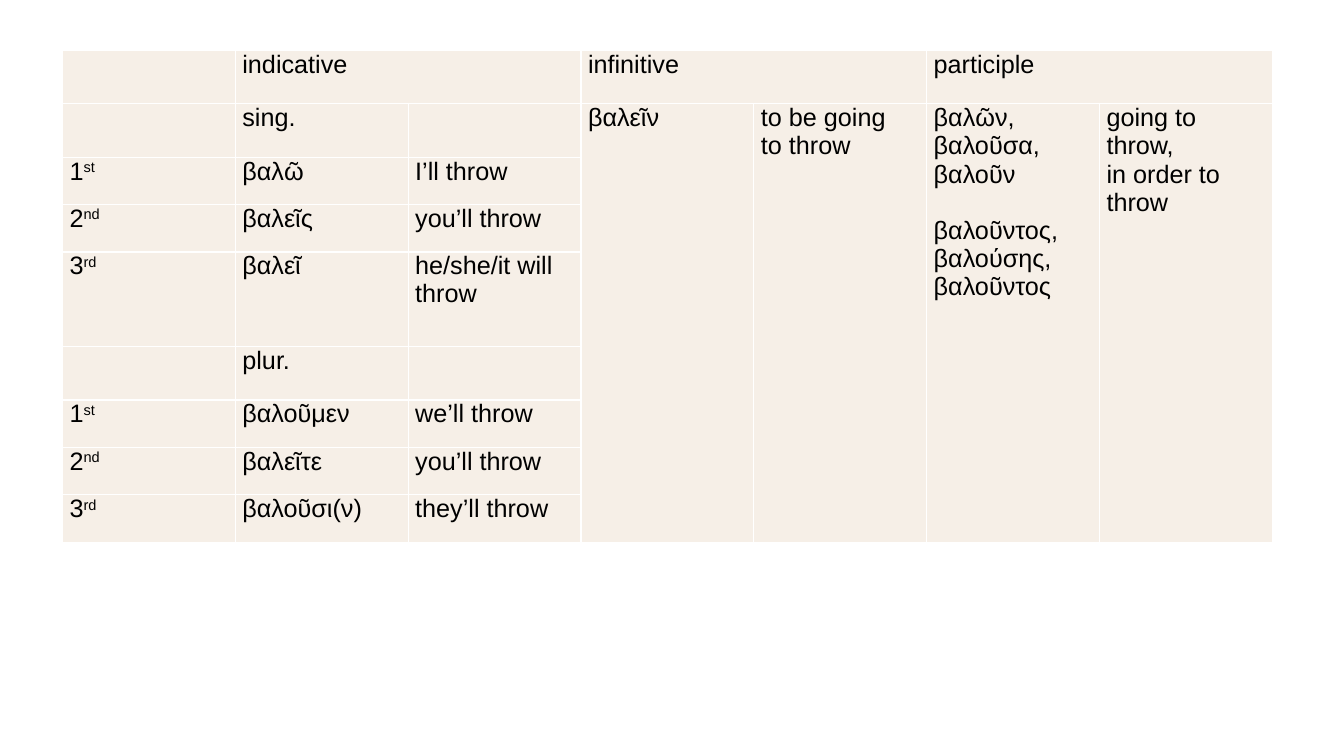
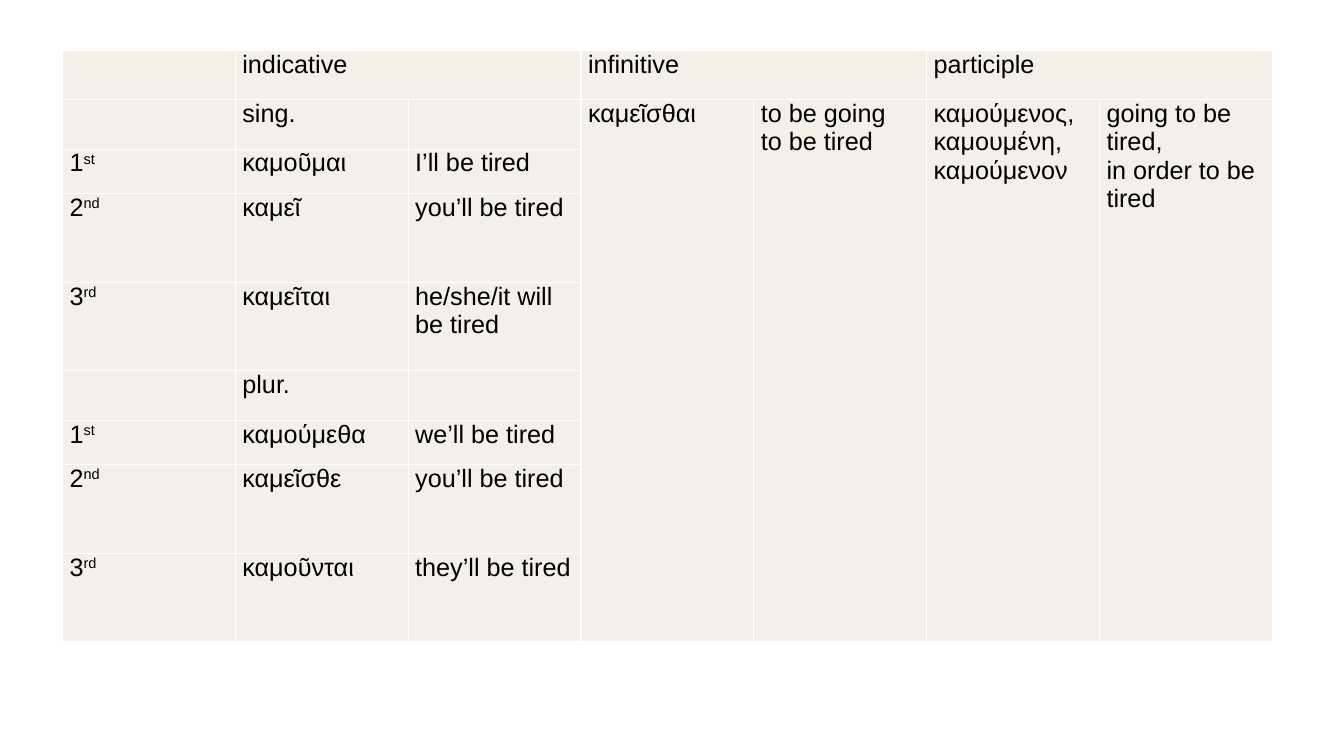
import dataclasses

import pptx
import pptx.dml.color
import pptx.oxml
import pptx.oxml.ns
import pptx.util

SAND = pptx.dml.color.RGBColor(0xF6, 0xEF, 0xE7)
WHITE = pptx.dml.color.RGBColor(0xFF, 0xFF, 0xFF)
BLACK = pptx.dml.color.RGBColor(0x00, 0x00, 0x00)
SCALE = 9144  # EMU in one px, at 100 px to the inch
LEFT, TOP, WIDE, COLS = 62, 50, 1200, 7
FONT = {"name": "Arial", "size": pptx.util.Pt(18), "bold": False}
EDGES = ("lnL", "lnR", "lnT", "lnB")
HEADS = ("indicative", "infinitive", "participle")
GROUPS = {1: "sing.", 5: "plur."}
RANKS = (("1", "st"), ("2", "nd"), ("3", "rd"))
WHO = ("I’ll", "you’ll", "he/she/it will", "we’ll", "you’ll", "they’ll")


@dataclasses.dataclass(frozen=True)
class Verb:
    act: str
    forms: tuple[str, ...]
    inf: str
    genders: tuple[str, ...]
    rows: tuple[int, ...]


VERBS = (
    Verb(
        "throw",
        ("βαλῶ", "βαλεῖς", "βαλεῖ", "βαλοῦμεν", "βαλεῖτε", "βαλοῦσι(ν)"),
        "βαλεῖν",
        ("βαλῶν, βαλοῦσα, βαλοῦν", "βαλοῦντος, βαλούσης, βαλοῦντος"),
        (53, 53, 47, 47, 94, 53, 47, 47, 47),
    ),
    Verb(
        "be tired",
        ("καμοῦμαι", "καμεῖ", "καμεῖται", "καμούμεθα", "καμεῖσθε", "καμοῦνται"),
        "καμεῖσθαι",
        ("καμούμενος, καμουμένη,\vκαμούμενον",),
        (49, 49, 44, 88, 88, 49, 44, 88, 88),
    ),
)


def px(size: int) -> pptx.util.Emu:
    return pptx.util.Emu(size * SCALE)


def style(run) -> None:
    for key, value in FONT.items():
        setattr(run.font, key, value)
    run.font.color.rgb = BLACK


def put(cell, *paras: str, sup: str = "") -> None:
    """Write paragraphs into a cell, with an optional raised ending."""
    frame = cell.text_frame
    for index, text in enumerate(paras):
        para = frame.add_paragraph() if index else frame.paragraphs[0]
        para.text = text
        if index:
            para.space_before = pptx.util.Pt(20)
        if sup:
            run = para.add_run()
            run.text = sup
            run._r.get_or_add_rPr().set("baseline", "30000")
        for run in para.runs:
            style(run)


def paint(cell) -> None:
    """Give a cell its margins, fill and thin white borders."""
    margins = {"margin_left": 7, "margin_right": 7, "margin_top": 0, "margin_bottom": 0}
    for key, value in margins.items():
        setattr(cell, key, px(value))
    cell.fill.solid()
    cell.fill.fore_color.rgb = SAND
    props = cell._tc.get_or_add_tcPr()
    for index, edge in enumerate(EDGES):
        props.insert(index, pptx.oxml.parse_xml(
            f'<a:{edge} {pptx.oxml.ns.nsdecls("a")} w="12700"><a:solidFill>'
            f'<a:srgbClr val="{WHITE}"/></a:solidFill></a:{edge}>'))


def draw(slide, verb: Verb) -> None:
    last = len(verb.rows) - 1
    frame = slide.shapes.add_table(
        len(verb.rows), COLS, px(LEFT), px(TOP), px(WIDE), px(sum(verb.rows)))
    table = frame.table
    table.first_row = table.horz_banding = False
    for row, high in zip(table.rows, verb.rows):
        row.height = px(high)
    for cell in table.iter_cells():
        paint(cell)

    for index, head in enumerate(HEADS):
        col = 1 + 2 * index
        table.cell(0, col).merge(table.cell(0, col + 1))
        put(table.cell(0, col), head)

    for start, (top, label) in enumerate(GROUPS.items()):
        put(table.cell(top, 1), label)
        for step, (rank, sup) in enumerate(RANKS):
            row, item = top + 1 + step, start * len(RANKS) + step
            put(table.cell(row, 0), rank, sup=sup)
            put(table.cell(row, 1), verb.forms[item])
            put(table.cell(row, 2), f"{WHO[item]} {verb.act}")

    tall = (
        (verb.inf,),
        (f"to be going\vto {verb.act}",),
        verb.genders,
        (f"going to {verb.act},\vin order to {verb.act}",),
    )
    for col, paras in enumerate(tall, start=3):
        table.cell(1, col).merge(table.cell(last, col))
        put(table.cell(1, col), *paras)


def main() -> None:
    deck = pptx.Presentation()
    deck.slide_width, deck.slide_height = px(1333), px(750)
    for verb in VERBS:
        draw(deck.slides.add_slide(deck.slide_layouts[6]), verb)
    deck.save("out.pptx")


if __name__ == "__main__":
    main()
